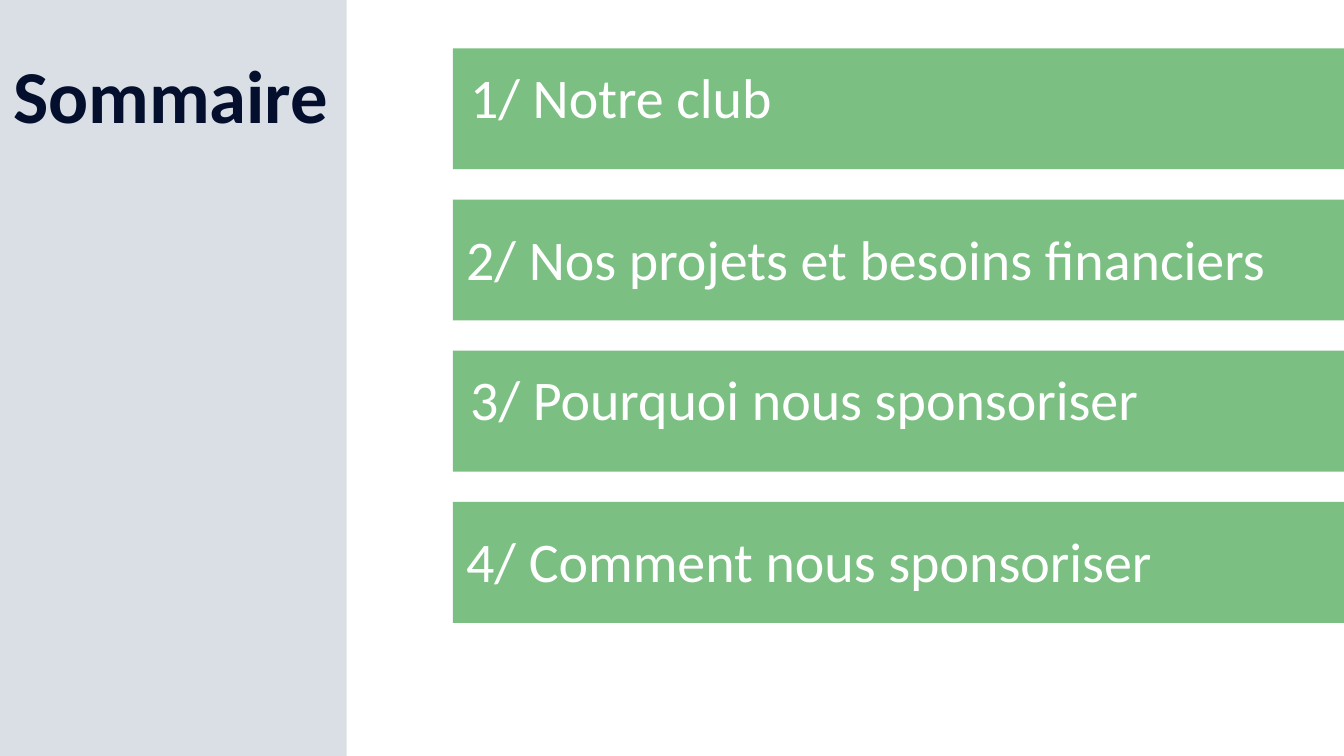
from pptx import Presentation
from pptx import util as u
from pptx.dml.color import RGBColor
from pptx.enum import shapes, text

WIDTH, HEIGHT = 10, 5.625
PANEL_WIDTH = 2.58
BAR_LEFT, BAR_TOP, BAR_HEIGHT = 3.37, 0.36, 0.9
ROW_PITCH = HEIGHT / 5
LINE_HEIGHT = 0.61

GREEN = RGBColor(0x7B, 0xC0, 0x82)
GREY = RGBColor(0xDA, 0xDF, 0xE6)
NAVY = RGBColor(0x03, 0x0F, 0x2D)
WHITE = RGBColor(0xFF, 0xFF, 0xFF)

TITLE = {"size": u.Pt(40), "bold": True}
ENTRY = {"size": u.Pt(30), "bold": False}
FRAME = {
    "word_wrap": True,
    "auto_size": text.MSO_AUTO_SIZE.SHAPE_TO_FIT_TEXT,
    "vertical_anchor": text.MSO_ANCHOR.TOP,
    "margin_left": u.Inches(0.1),
    "margin_right": u.Inches(0.1),
    "margin_top": u.Inches(0.1),
    "margin_bottom": u.Inches(0.1),
}
ENTRIES = [
    ("1/ Notre club", 5.56),
    ("2/ Nos projets et besoins financiers", 8.98),
    ("3/ Pourquoi nous sponsoriser", 7.08),
    ("4/ Comment nous sponsoriser", 8.98),
]
NUDGES = [(0.03, 0.1), (0, 0.18)]


def apply(obj, values):
    for name, value in values.items():
        setattr(obj, name, value)


def add_block(s, box, color):
    sp = s.shapes.add_shape(shapes.MSO_SHAPE.RECTANGLE, *map(u.Inches, box))
    sp.shadow.inherit = False
    sp.fill.solid()
    sp.fill.fore_color.rgb = color
    sp.line.fill.background()


def add_label(s, box, words, style, color):
    sp = s.shapes.add_textbox(*map(u.Inches, box))
    tf = sp.text_frame
    apply(tf, FRAME)
    p = tf.paragraphs[0]
    p.line_spacing = 0.8
    r = p.add_run()
    r.text = words
    apply(r.font, {"name": "Calibri", **style})
    r.font.color.rgb = color


def add_entry(s, row, words, width):
    top = BAR_TOP + row * ROW_PITCH
    dx, dy = NUDGES[row % 2]
    add_block(s, (BAR_LEFT, top, WIDTH - BAR_LEFT, BAR_HEIGHT), GREEN)
    add_label(s, (BAR_LEFT + dx, top + dy, width, LINE_HEIGHT), words, ENTRY, WHITE)


def main():
    prs = Presentation()
    prs.slide_width, prs.slide_height = u.Inches(WIDTH), u.Inches(HEIGHT)
    s = prs.slides.add_slide(prs.slide_layouts[6])
    add_block(s, (0, 0, PANEL_WIDTH, HEIGHT), GREY)
    add_label(s, (0, 0.39, PANEL_WIDTH, 0.74), "Sommaire", TITLE, NAVY)
    for row, (words, width) in enumerate(ENTRIES):
        add_entry(s, row, words, width)
    prs.save("out.pptx")


if __name__ == "__main__":
    main()
